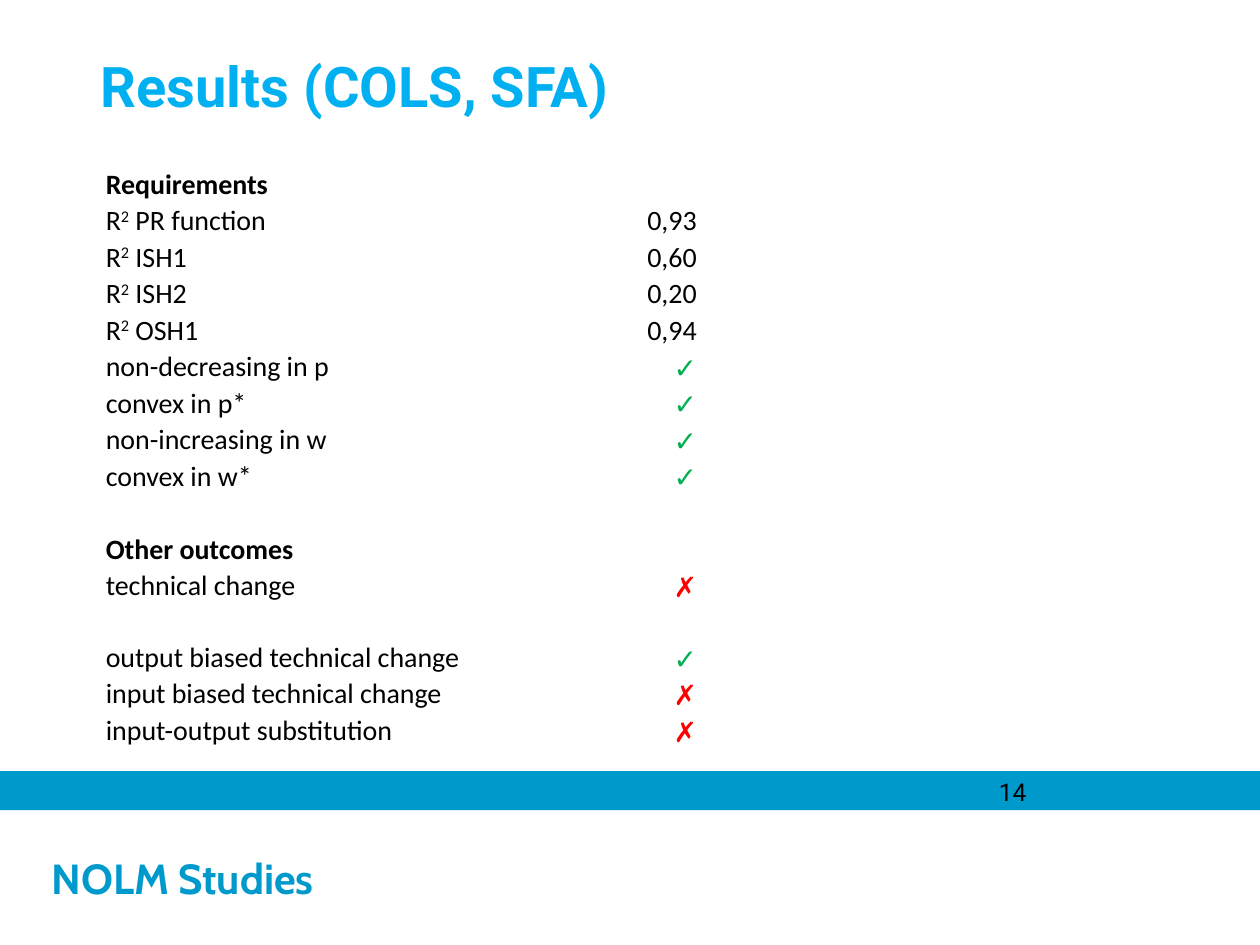
from pptx import Presentation
from pptx.dml.color import RGBColor
from pptx.enum.shapes import MSO_SHAPE as Shape
from pptx.enum.text import MSO_ANCHOR as Anchor, PP_ALIGN as Align
from pptx.util import Inches, Pt

BLUE, BLACK, WHITE = "0099CC", "000000", "FFFFFF"
MARKS = {"✓": "00B050", "✗": "FF0000"}
ROWS = [
    ("Requirements", ""),
    ("R² PR function", "0,93"),
    ("R² ISH1", "0,60"),
    ("R² ISH2", "0,20"),
    ("R² OSH1", "0,94"),
    ("non-decreasing in p", "✓"),
    ("convex in p*", "✓"),
    ("non-increasing in w", "✓"),
    ("convex in w*", "✓"),
    ("", ""),
    ("Other outcomes", ""),
    ("technical change", "✗"),
    ("output biased technical change", "✓"),
    ("input biased technical change", "✗"),
    ("input-output substitution", "✗"),
]
HEADS = ("Requirements", "Other outcomes")
TALL = "output biased technical change"


def color(code):
    return RGBColor.from_string(code)


class Deck:
    def __init__(self):
        self.prs = Presentation()
        self.prs.slide_width, self.prs.slide_height = Inches(10), Inches(7.5)
        self.slide = self.prs.slides.add_slide(self.prs.slide_layouts[5])

    def style(self, para, size, face, code=BLACK, bold=False):
        font = para.font
        font.size, font.name, font.bold = Pt(size), face, bold
        font.color.rgb = color(code)

    def title(self, text, left, top, width, height):
        box = self.slide.shapes.title
        box.left, box.top = Inches(left), Inches(top)
        box.width, box.height = Inches(width), Inches(height)
        frame = box.text_frame
        frame.text, frame.vertical_anchor = text, Anchor.TOP
        para = frame.paragraphs[0]
        para.alignment = Align.LEFT
        self.style(para, 32, "Roboto", "00B0F0", True)

    def bar(self, left, top, width, height, fill):
        bar = self.slide.shapes.add_shape(
            Shape.RECTANGLE, Inches(left), Inches(top), Inches(width), Inches(height))
        bar.shadow.inherit = False
        bar.fill.solid()
        bar.fill.fore_color.rgb = color(fill)
        bar.line.fill.background()
        return bar

    def brand(self, bar, text, indent):
        frame = bar.text_frame
        frame.margin_left, frame.vertical_anchor = Inches(indent), Anchor.MIDDLE
        frame.text = text
        frame.paragraphs[0].alignment = Align.LEFT
        self.style(frame.paragraphs[0], 24, "Cabin", BLUE, True)

    def label(self, text, left, top, width, height):
        box = self.slide.shapes.add_textbox(
            Inches(left), Inches(top), Inches(width), Inches(height))
        box.text_frame.word_wrap = True
        box.text_frame.text = text
        self.style(box.text_frame.paragraphs[0], 14, "Roboto")

    def cell(self, cell, text, align):
        cell.fill.background()
        cell.vertical_anchor = Anchor.BOTTOM
        cell.margin_left = cell.margin_right = cell.margin_top = Inches(0.01)
        cell.margin_bottom = 0
        para = cell.text_frame.paragraphs[0]
        para.alignment = align
        base, power, rest = text.partition("²")
        for part in (base, "2" if power else "", rest):
            if part:
                para.add_run().text = part
        if power:
            para.runs[1].font._element.set("baseline", "30000")
        face = "Arial" if text in MARKS else "Calibri"
        self.style(para, 16, face, MARKS.get(text, BLACK), text in HEADS)

    def table(self, rows, left, top, widths, step):
        table = self.slide.shapes.add_table(
            len(rows), len(widths), Inches(left), Inches(top),
            Inches(sum(widths)), Inches(step * len(rows))).table
        table.first_row = table.horz_banding = False
        for col, width in zip(table.columns, widths):
            col.width = Inches(width)
        for i, row in enumerate(rows):
            table.rows[i].height = Inches(0.57 if row[0] == TALL else step)
            for j, align in enumerate((Align.LEFT, Align.RIGHT)):
                self.cell(table.cell(i, j), row[j], align)


def main():
    deck = Deck()
    footer = deck.bar(0, 6.44, 10, 1.06, WHITE)
    deck.brand(footer, "NOLM Studies", 0.41)
    deck.bar(0, 6.12, 10, 0.31, BLUE)
    deck.label("14", 7.83, 6.12, 2.08, 0.25)
    deck.title("Results (COLS, SFA)", 0.7, 0.36, 8.87, 0.64)
    deck.table(ROWS, 0.83, 1.31, (3.16, 1.55), 0.29)
    deck.prs.save("out.pptx")


if __name__ == "__main__":
    main()
